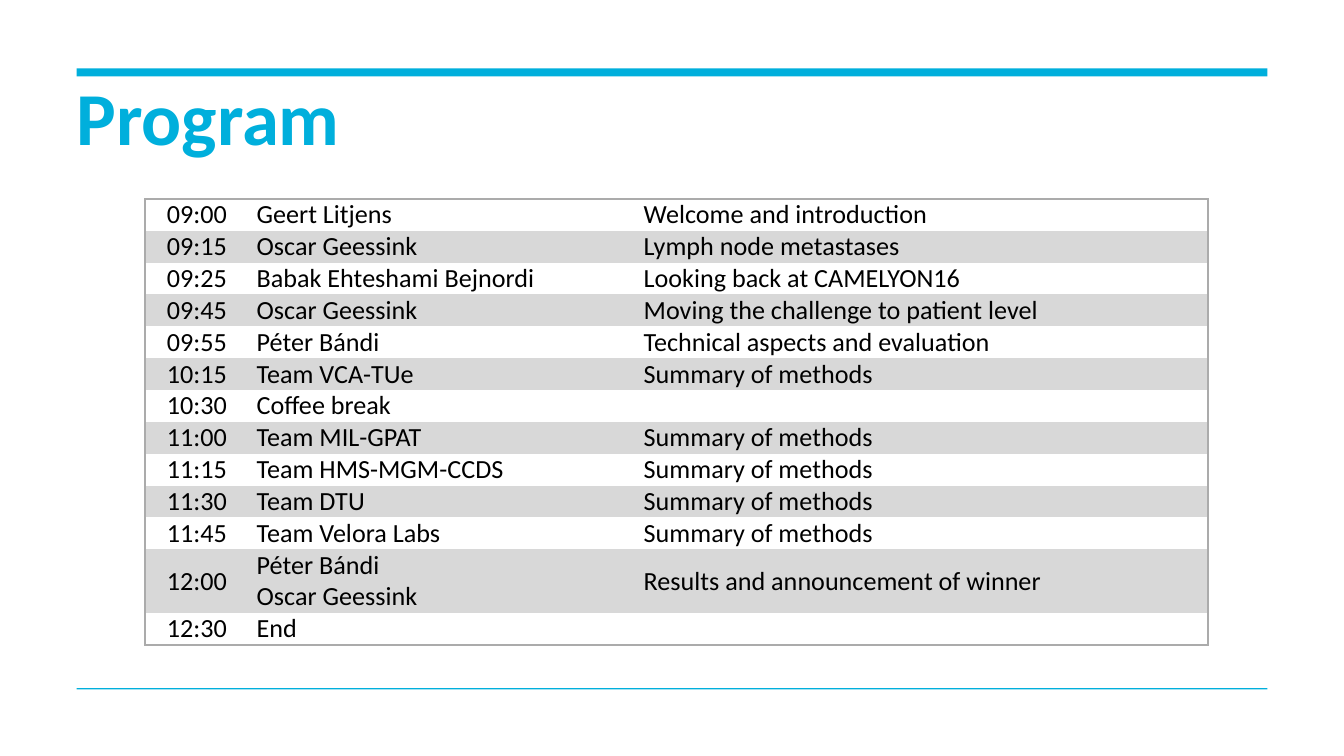
import pptx
import pptx.dml.color
import pptx.enum.shapes
import pptx.enum.text
import pptx.oxml
import pptx.oxml.ns
import pptx.util
from lxml import etree

Inches, Pt = pptx.util.Inches, pptx.util.Pt
ALIGN = pptx.enum.text.PP_ALIGN
MIDDLE = pptx.enum.text.MSO_ANCHOR.MIDDLE
qn = pptx.oxml.ns.qn

ACCENT, BAND, FRAME, INK = "00AFDC", "D8D8D8", "ABABAB", "000000"
FONT = "Calibri"
LEFT, WIDTH = 0.57, 8.86
COLUMNS = [0.61, 0.22, 2.65, 0.23, 4.2]  # time, gap, speaker, gap, topic
ROW = 0.21
NO_GRID_STYLE = "{2D5ABB26-0587-4C30-8999-92F81FD0307C}"

METHODS = "Summary of methods"
PROGRAM = [
    ("09:00", "Geert Litjens", "Welcome and introduction"),
    ("09:15", "Oscar Geessink", "Lymph node metastases"),
    ("09:25", "Babak Ehteshami Bejnordi", "Looking back at CAMELYON16"),
    ("09:45", "Oscar Geessink", "Moving the challenge to patient level"),
    ("09:55", "Péter Bándi", "Technical aspects and evaluation"),
    ("10:15", "Team VCA-TUe", METHODS),
    ("10:30", "Coffee break", ""),
    ("11:00", "Team MIL-GPAT", METHODS),
    ("11:15", "Team HMS-MGM-CCDS", METHODS),
    ("11:30", "Team DTU", METHODS),
    ("11:45", "Team Velora Labs", METHODS),
    ("12:00", "Péter Bándi \nOscar Geessink", "Results and announcement of winner"),
    ("12:30", "End", ""),
]


def rgb(code):
    return pptx.dml.color.RGBColor.from_string(code)


def add_border(cell, side):
    """Draw the frame line on one side (L, R, T or B); call in that order."""
    line = etree.SubElement(cell._tc.get_or_add_tcPr(), qn(f"a:ln{side}"), w=str(Pt(1)))
    fill = etree.SubElement(line, qn("a:solidFill"))
    etree.SubElement(fill, qn("a:srgbClr"), val=FRAME)


deck = pptx.Presentation()
deck.slide_width = Inches(10)
deck.slide_height = deck.slide_width * 9 // 16
slide = deck.slides.add_slide(deck.slide_layouts[5])

# Rules above and below the content
for top, thickness in [(0.51, 0.06), (5.12, 0.01)]:
    rule = slide.shapes.add_shape(
        pptx.enum.shapes.MSO_SHAPE.RECTANGLE,
        Inches(LEFT), Inches(top), Inches(WIDTH), Inches(thickness))
    rule.shadow.inherit = False
    rule.fill.solid()
    rule.fill.fore_color.rgb = rgb(ACCENT)
    rule.line.fill.background()

# Heading
heading = slide.shapes.title
heading.left, heading.top = Inches(LEFT), Inches(0.61)
heading.width, heading.height = Inches(WIDTH), Inches(0.58)
frame = heading.text_frame
frame.margin_left = frame.margin_right = frame.margin_top = frame.margin_bottom = 0
frame.vertical_anchor = MIDDLE
frame.word_wrap = True
paragraph = frame.paragraphs[0]
paragraph.alignment = ALIGN.LEFT
paragraph.line_spacing = Pt(42)
run = paragraph.add_run()
run.text = "Program"
run.font.name, run.font.size, run.font.bold = FONT, Pt(40), True
run.font.color.rgb = rgb(ACCENT)

# Schedule
schedule_frame = slide.shapes.add_table(
    len(PROGRAM), len(COLUMNS), Inches(1.08), Inches(1.48),
    Inches(sum(COLUMNS)), Inches(ROW * len(PROGRAM)))
schedule = schedule_frame.table
schedule.first_row = schedule.horz_banding = False
schedule._tbl.tblPr.find(qn("a:tableStyleId")).text = NO_GRID_STYLE
for column, width in zip(schedule.columns, COLUMNS):
    column.width = Inches(width)

last_row, last_column = len(PROGRAM) - 1, len(COLUMNS) - 1
for r, (time, speaker, topic) in enumerate(PROGRAM):
    for c, entry in enumerate([time, "", speaker, "", topic]):
        cell = schedule.cell(r, c)
        cell.margin_left = cell.margin_right = cell.margin_top = cell.margin_bottom = 0
        cell.vertical_anchor = MIDDLE
        for side, on_edge in [("L", c == 0), ("R", c == last_column),
                              ("T", r == 0), ("B", r == last_row)]:
            if on_edge:
                add_border(cell, side)
        if r % 2:
            cell.fill.solid()
            cell.fill.fore_color.rgb = rgb(BAND)
        else:
            cell.fill.background()

        paragraph = cell.text_frame.paragraphs[0]
        paragraph.alignment = ALIGN.RIGHT if c == 0 else ALIGN.LEFT
        if not entry:  # keeps an empty cell from stretching its row
            etree.SubElement(paragraph._p, qn("a:endParaRPr"), sz="1400")
            continue
        for n, text in enumerate(entry.split("\n")):
            if n:
                paragraph.add_line_break()
            run = paragraph.add_run()
            run.text = text
            run.font.name, run.font.size = FONT, Pt(14)
            run.font.color.rgb = rgb(INK)
schedule_frame.height = Inches(3.27)

deck.save("out.pptx")
